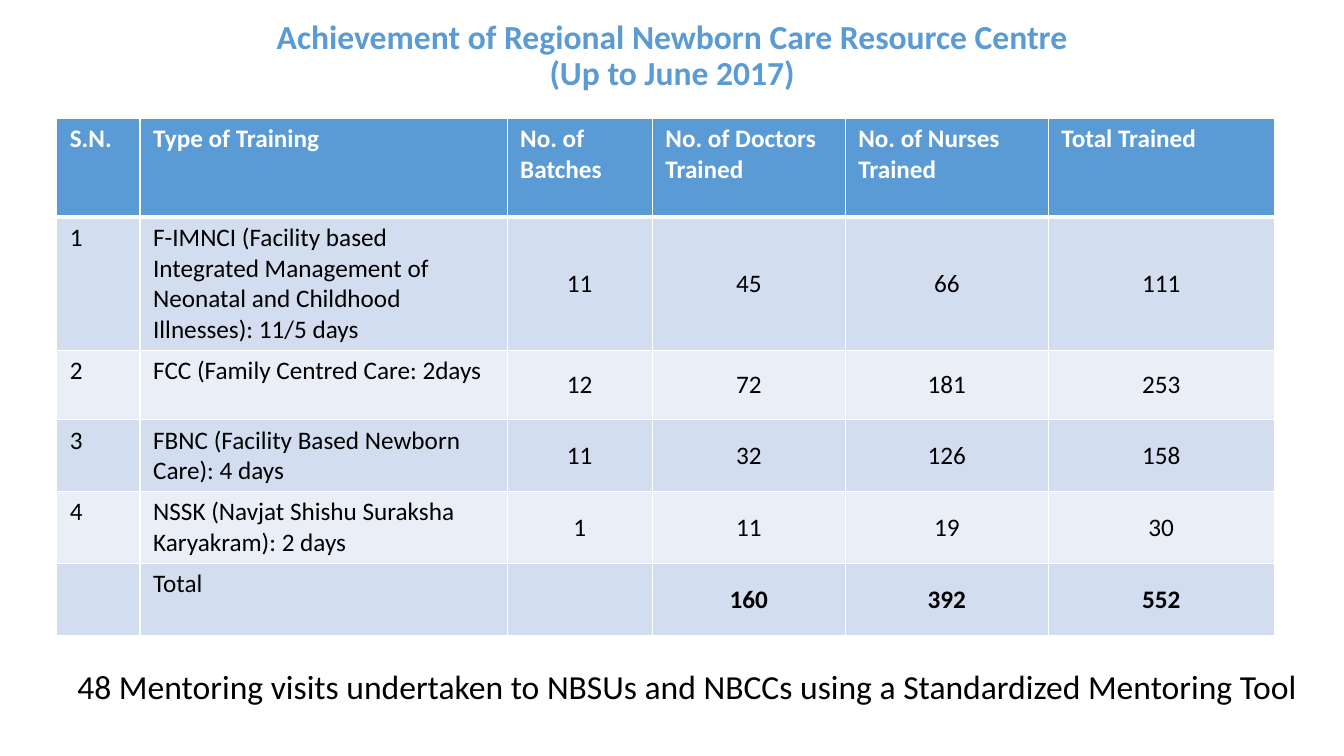
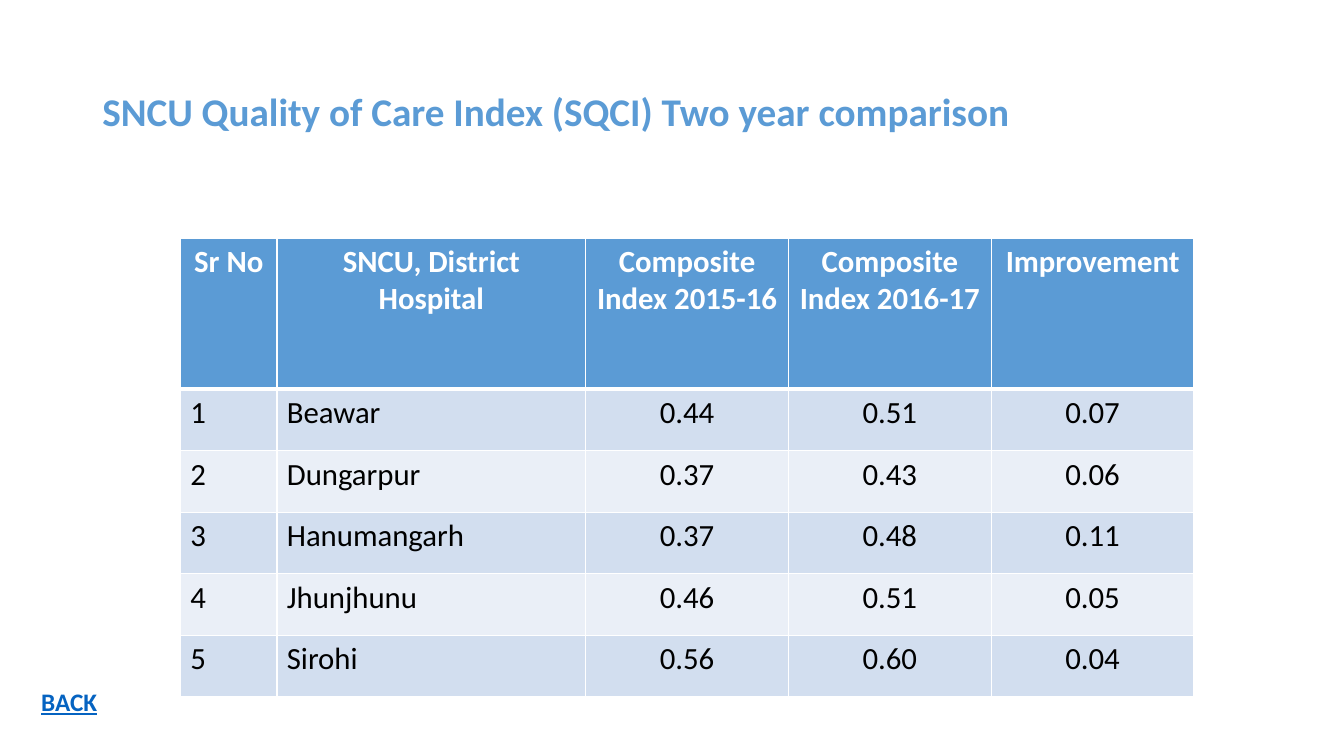
from lxml import etree
from pptx import Presentation
from pptx import util as u
from pptx.dml import color
from pptx.enum import text
from pptx.oxml import ns

COLOURS = {
    "accent": "5B9BD5",
    "band_dark": "D2DEEF",
    "band_light": "EAEFF7",
    "white": "FFFFFF",
    "black": "000000",
    "link": "0563C1",
}
FONT = "Calibri"
LEFT, CENTRE = text.PP_ALIGN.LEFT, text.PP_ALIGN.CENTER
TOP, MIDDLE = text.MSO_ANCHOR.TOP, text.MSO_ANCHOR.MIDDLE
LEFT_COLUMNS = 2  # number and name columns; the rest hold centred figures

TRAINING_ROWS = [
    ["S.N.", "Type of Training", "No. of Batches", "No. of Doctors Trained",
     "No. of Nurses Trained", "Total Trained"],
    ["1", "F-IMNCI (Facility based Integrated Management of Neonatal and "
     "Childhood Illnesses): 11/5 days", "11", "45", "66", "111"],
    ["2", "FCC (Family Centred Care: 2days", "12", "72", "181", "253"],
    ["3", "FBNC (Facility Based Newborn Care): 4 days", "11", "32", "126", "158"],
    ["4", "NSSK (Navjat Shishu Suraksha Karyakram): 2 days", "1", "11", "19", "30"],
    ["", "Total", "", "160", "392", "552"],
]
INDEX_ROWS = [
    ["Sr No", "SNCU, District Hospital", "Composite Index 2015-16",
     "Composite Index 2016-17", "Improvement"],
    ["1", "Beawar", "0.44", "0.51", "0.07"],
    ["2", "Dungarpur", "0.37", "0.43", "0.06"],
    ["3", "Hanumangarh", "0.37", "0.48", "0.11"],
    ["4", "Jhunjhunu", "0.46", "0.51", "0.05"],
    ["5", "Sirohi", "0.56", "0.60", "0.04"],
]


def rgb(name):
    return color.RGBColor.from_string(COLOURS[name])


def add_run(paragraph, words, size, colour, bold=False, underline=False):
    run = paragraph.add_run()
    run.text = words
    font = run.font
    font.name, font.size = FONT, u.Pt(size)
    font.bold, font.underline = bold, underline
    font.color.rgb = rgb(colour)


def add_text(slide, box, lines, size, colour, align=LEFT, anchor=MIDDLE,
             spacing=0.9, **style):
    """Place one paragraph, its lines parted by line breaks, in a box in cm."""
    shape = slide.shapes.add_textbox(*map(u.Cm, box))
    frame = shape.text_frame
    frame.word_wrap = True
    frame.vertical_anchor = anchor
    paragraph = frame.paragraphs[0]
    paragraph.alignment, paragraph.line_spacing = align, spacing
    for index, line in enumerate(lines):
        if index:
            paragraph.add_line_break()
        add_run(paragraph, line, size, colour, **style)


def add_title(slide, box, lines, size, align=LEFT):
    add_text(slide, box, lines, size, "accent", align, bold=True)


def set_borders(cell, widths):
    properties = cell._tc.get_or_add_tcPr()
    for side, width in widths.items():
        line = etree.SubElement(properties, ns.qn(f"a:ln{side}"), w=str(u.Pt(width)))
        fill = etree.SubElement(line, ns.qn("a:solidFill"))
        etree.SubElement(fill, ns.qn("a:srgbClr"), val=COLOURS["white"])


def add_banded_table(slide, origin, widths, heights, rows, size, margin,
                     header_align=LEFT, figure_anchor=TOP, total_row=False):
    """Place a table with a coloured header and alternating bands, in cm."""
    frame = slide.shapes.add_table(
        len(rows), len(widths), *map(u.Cm, (*origin, sum(widths), sum(heights))))
    table = frame.table
    table.horz_banding = False
    for column, width in zip(table.columns, widths):
        column.width = u.Cm(width)
    for row, height in zip(table.rows, heights):
        row.height = u.Cm(height)

    for row_index, values in enumerate(rows):
        header = row_index == 0
        total = total_row and row_index == len(rows) - 1
        band = "accent" if header else "band_dark" if row_index % 2 else "band_light"
        for column_index, value in enumerate(values):
            figure = not header and column_index >= LEFT_COLUMNS
            cell = table.cell(row_index, column_index)
            set_borders(cell, {"L": 1, "R": 1, "T": 3 if row_index == 1 else 1,
                               "B": 3 if header else 1})
            cell.fill.solid()
            cell.fill.fore_color.rgb = rgb(band)
            cell.margin_left = cell.margin_right = u.Cm(margin)
            cell.margin_top = cell.margin_bottom = u.Cm(0.13)
            cell.vertical_anchor = figure_anchor if figure else TOP
            paragraph = cell.text_frame.paragraphs[0]
            paragraph.alignment = header_align if header else CENTRE if figure else LEFT
            if value:
                add_run(paragraph, value, size, "white" if header else "black",
                        bold=header or (total and figure))


def build_training_slide(slide):
    add_title(slide, (1.7, 0, 30.48, 2.87),
              ["Achievement of Regional Newborn Care Resource Centre",
               "(Up to June 2017)"], 24, CENTRE)
    add_banded_table(slide, (1.43, 2.98), [2.1, 9.25, 3.66, 4.86, 5.12, 5.69],
                     [2.49, 3.36, 1.75, 1.81, 1.81, 1.81], TRAINING_ROWS, 18, 0.33,
                     figure_anchor=MIDDLE, total_row=True)
    # Closing remark
    add_text(slide, (1.7, 16.62, 31.45, 1.48),
             ["48 Mentoring visits undertaken to NBSUs and NBCCs using a "
              "Standardized Mentoring Tool"], 24, "black")


def build_index_slide(slide):
    add_title(slide, (2.33, 1.02, 29.21, 3.68),
              ["SNCU Quality of Care Index (SQCI) Two year comparison"], 28)
    add_banded_table(slide, (4.55, 6), [2.43, 7.78] + [5.11] * 3,
                     [3.81] + [1.55] * 5, INDEX_ROWS, 22, 0.25, CENTRE)
    # Return label
    add_text(slide, (0.79, 17.17, 3.07, 1.02), ["BACK"], 18, "link",
             anchor=TOP, spacing=1, bold=True, underline=True)


def main():
    presentation = Presentation()
    presentation.slide_width, presentation.slide_height = u.Cm(33.87), u.Cm(19.05)
    blank = presentation.slide_layouts[6]
    for build in (build_training_slide, build_index_slide):
        build(presentation.slides.add_slide(blank))
    presentation.save("out.pptx")


if __name__ == "__main__":
    main()
